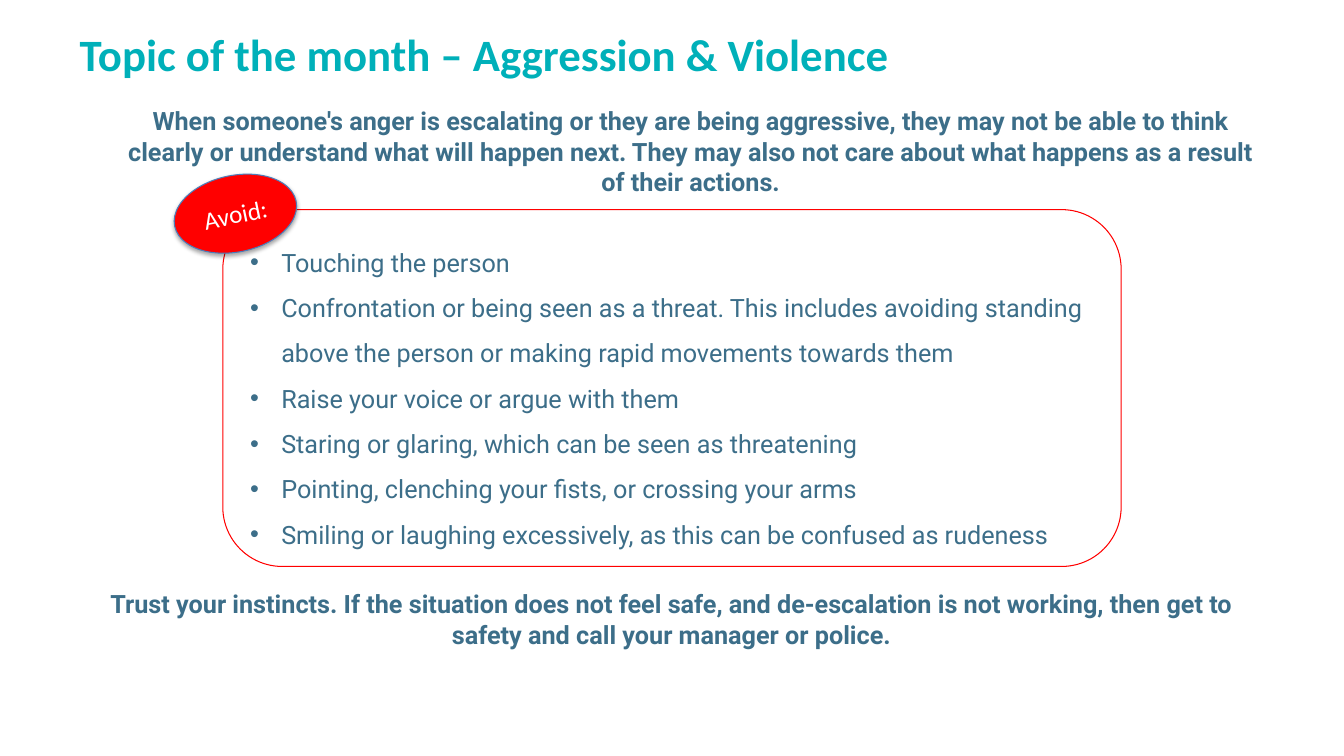
import pptx
import pptx.dml.color
import pptx.enum.shapes
import pptx.enum.text
import pptx.oxml.ns
import pptx.util
from lxml import etree

Inches = pptx.util.Inches
Pt = pptx.util.Pt
ALIGN = pptx.enum.text.PP_ALIGN
ANCHOR = pptx.enum.text.MSO_ANCHOR
AUTO_SIZE = pptx.enum.text.MSO_AUTO_SIZE
SHAPE = pptx.enum.shapes.MSO_SHAPE


def rgb(value):
    return pptx.dml.color.RGBColor.from_string(value)


def add_xml(parent, tag, **attributes):
    return etree.SubElement(parent, pptx.oxml.ns.qn(tag), attributes)


class Deck:
    """Holds the style and the current slide."""

    TEAL, BLUE, RED, WHITE = "00B0B9", "3C6E89", "FF0000", "FFFFFF"
    HEADING, BODY = "Calibri", "Roboto"

    def __init__(self):
        self.prs = pptx.Presentation()
        self.prs.slide_width = Inches(13.33)
        self.prs.slide_height = Inches(7.5)
        self.s = self.prs.slides.add_slide(self.prs.slide_layouts[1])

    def place(self, sp, box):
        sp.left, sp.top, sp.width, sp.height = (Inches(v) for v in box)

    def frame(self, sp, anchor=ANCHOR.TOP, auto_size=AUTO_SIZE.NONE):
        tf = sp.text_frame
        tf.word_wrap = True
        tf.auto_size = auto_size
        tf.vertical_anchor = anchor
        return tf

    def run(self, p, text, font=BODY, size=18, color=BLUE, bold=False):
        r = p.add_run()
        r.text = text
        r.font.name = font
        r.font.size = Pt(size)
        r.font.bold = bold
        r.font.color.rgb = rgb(color)

    def title(self, text, box):
        sp = self.s.shapes.title
        self.place(sp, box)
        p = self.frame(sp).paragraphs[0]
        p.alignment = ALIGN.LEFT
        p.line_spacing = Pt(32)
        self.run(p, text, self.HEADING, 32, self.TEAL, True)

    def bullets(self, items, box, indent=0.31):
        sp = self.s.placeholders[1]
        self.place(sp, box)
        tf = self.frame(sp)
        for i, item in enumerate(items):
            p = tf.add_paragraph() if i else tf.paragraphs[0]
            pPr = p._p.get_or_add_pPr()
            pPr.set("marL", str(Inches(indent)))
            pPr.set("indent", str(-Inches(indent)))
            add_xml(pPr, "a:buChar", char="•")
            p.line_spacing = 1.5
            p.space_before = Pt(0)
            self.run(p, item)

    def shape(self, kind, box, line, fill=None):
        sp = self.s.shapes.add_shape(kind, *(Inches(v) for v in box))
        sp.shadow.inherit = False
        sp.line.color.rgb = rgb(line)
        sp.line.width = Pt(0.75)
        if fill:
            sp.fill.solid()
            sp.fill.fore_color.rgb = rgb(fill)
        else:
            sp.fill.background()
        return sp

    def badge(self, text, box, rotation):
        sp = self.shape(SHAPE.OVAL, box, "4B7EBC", self.RED)
        sp.rotation = rotation
        self.shadow(sp)
        tf = self.frame(sp, ANCHOR.MIDDLE)
        tf.margin_left = tf.margin_right = 0
        p = tf.paragraphs[0]
        p.alignment = ALIGN.CENTER
        self.run(p, text, self.HEADING, color=self.WHITE)

    def shadow(self, sp):
        """Fill the empty effect list with a soft shadow straight below."""
        effects = sp._element.spPr.find(pptx.oxml.ns.qn("a:effectLst"))
        outer = add_xml(effects, "a:outerShdw", blurRad=str(Pt(3.1)),
                        dist=str(Pt(1.8)), dir="5400000", rotWithShape="0")
        color = add_xml(outer, "a:srgbClr", val="000000")
        add_xml(color, "a:alpha", val="35000")

    def statement(self, text, box):
        sp = self.s.shapes.add_textbox(*(Inches(v) for v in box))
        p = self.frame(sp, auto_size=AUTO_SIZE.SHAPE_TO_FIT_TEXT).paragraphs[0]
        p.alignment = ALIGN.CENTER
        self.run(p, text, bold=True)


def main():
    deck = Deck()
    deck.title("Topic of the month – Aggression & Violence", (0.69, 0.3, 11.95, 0.93))
    deck.bullets([
        "Touching the person",
        "Confrontation or being seen as a threat. This includes avoiding standing "
        "above the person or making rapid movements towards them",
        "Raise your voice or argue with them",
        "Staring or glaring, which can be seen as threatening",
        "Pointing, clenching your fists, or crossing your arms",
        "Smiling or laughing excessively, as this can be confused as rudeness",
    ], (2.38, 2.25, 8.56, 3.2))
    deck.shape(SHAPE.ROUNDED_RECTANGLE, (2.21, 2.08, 8.91, 3.54), deck.RED)
    deck.statement(
        "When someone's anger is escalating or they are being aggressive, they may "
        "not be able to think clearly or understand what will happen next. They may "
        "also not care about what happens as a result of their actions.",
        (1.04, 1, 11.62, 0.71))
    deck.badge("Avoid:", (1.72, 1.74, 1.23, 0.76), 348.4)
    deck.statement(
        "Trust your instincts. If the situation does not feel safe, and de-escalation "
        "is not working, then get to safety and call your manager or police.",
        (0.74, 5.79, 11.84, 0.71))
    deck.prs.save("out.pptx")


if __name__ == "__main__":
    main()
